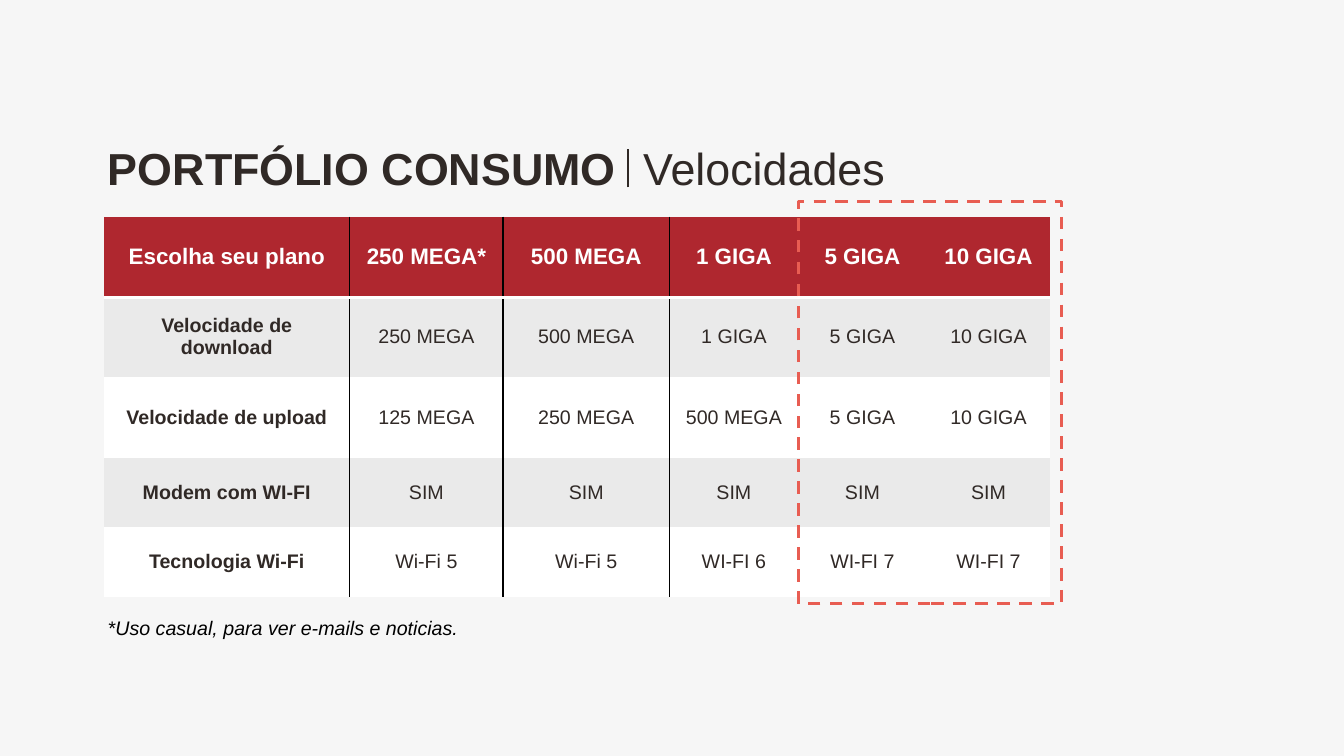
"""Build the slide of home internet plans and their speeds."""
from typing import NamedTuple

from lxml import etree
from pptx import Presentation
from pptx import util as u
from pptx.dml.color import RGBColor
from pptx.enum import dml, shapes, text
from pptx.oxml import ns

FONT = "Arial"
HUES = {"back": "F6F6F6", "ink": "302926", "red": "AF272F", "grey": "EAEAEA",
        "white": "FFFFFF", "black": "000000", "coral": "E85D52"}
WIDTHS = (2.44, 1.52, 1.65, 1.28, 1.27, 1.23)
HEIGHTS = (0.8, 0.79, 0.8, 0.69, 0.69)
PLANS = (
    ("Escolha seu plano", "250 MEGA*", "500 MEGA", "1 GIGA", "5 GIGA", "10 GIGA"),
    ("Velocidade de download", "250 MEGA", "500 MEGA", "1 GIGA", "5 GIGA", "10 GIGA"),
    ("Velocidade de upload", "125 MEGA", "250 MEGA", "500 MEGA", "5 GIGA", "10 GIGA"),
    ("Modem com WI-FI", "SIM", "SIM", "SIM", "SIM", "SIM"),
    ("Tecnologia Wi-Fi", "Wi-Fi 5", "Wi-Fi 5", "WI-FI 6", "WI-FI 7", "WI-FI 7"),
)
PLAIN = "{2D5ABB26-0587-4C30-8999-92F81FD0307C}"


class Box(NamedTuple):
    left: float
    top: float
    width: float
    height: float

    def sides(self) -> list:
        return [u.Inches(side) for side in self]


class Style(NamedTuple):
    size: int
    hue: str = "ink"
    bold: bool = False
    slant: bool = False


class Label(NamedTuple):
    words: str
    box: Box
    style: Style
    anchor: text.MSO_ANCHOR = text.MSO_ANCHOR.TOP


TITLE = Label("PORTFÓLIO CONSUMO", Box(0.97, 1.35, 5.59, 0.64), Style(32, bold=True))
NOTES = (
    Label("Velocidades", Box(6.28, 1.35, 3.52, 0.64), Style(32)),
    Label("*Uso casual, para ver e-mails e noticias.", Box(0.97, 5.99, 4.44, 0.47),
          Style(14, "black", slant=True), text.MSO_ANCHOR.MIDDLE),
)


def color(hue: str) -> RGBColor:
    return RGBColor.from_string(HUES[hue])


def write(frame, words: str, style: Style, align=text.PP_ALIGN.LEFT) -> None:
    frame.text = words
    frame.paragraphs[0].alignment = align
    font = frame.paragraphs[0].runs[0].font
    font.name, font.size = FONT, u.Pt(style.size)
    font.bold, font.italic = style.bold, style.slant
    font.color.rgb = color(style.hue)


def place(shape, label: Label) -> None:
    shape.left, shape.top, shape.width, shape.height = label.box.sides()
    frame = shape.text_frame
    frame.word_wrap = True
    frame.auto_size = text.MSO_AUTO_SIZE.NONE
    frame.vertical_anchor = label.anchor
    write(frame, label.words, label.style)


def edge(cell, side: str, hue: str, points: int) -> None:
    props = cell._tc.get_or_add_tcPr()
    line = etree.SubElement(props, ns.qn(f"a:ln{side}"), w=str(u.Pt(points)))
    fill = etree.SubElement(line, ns.qn("a:solidFill"))
    etree.SubElement(fill, ns.qn("a:srgbClr"), val=HUES[hue])


def fill_cell(cell, row: int, col: int) -> None:
    if col in (1, 2):
        edge(cell, "L", "black", 1)
    if col in (0, 1):
        edge(cell, "R", "black", 1)
    if row == 0:
        edge(cell, "B", "white", 2)
    cell.fill.solid()
    cell.fill.fore_color.rgb = color("red" if row == 0 else ("white", "grey")[row % 2])
    cell.vertical_anchor = text.MSO_ANCHOR.MIDDLE
    cell.margin_left = cell.margin_right = u.Inches(0.09)
    style = Style(16, "white", True) if row == 0 else Style(14, bold=col == 0)
    write(cell.text_frame, PLANS[row][col], style, text.PP_ALIGN.CENTER)


def add_plans(slide) -> None:
    box = Box(1.03, 2.15, sum(WIDTHS), sum(HEIGHTS))
    table = slide.shapes.add_table(len(HEIGHTS), len(WIDTHS), *box.sides()).table
    table._tbl.tblPr.find(ns.qn("a:tableStyleId")).text = PLAIN
    for col, width in enumerate(WIDTHS):
        table.columns[col].width = u.Inches(width)
    for row, height in enumerate(HEIGHTS):
        table.rows[row].height = u.Inches(height)
        for col in range(len(WIDTHS)):
            fill_cell(table.cell(row, col), row, col)


def add_rule(slide) -> None:
    ends = [u.Inches(side) for side in (6.23, 1.86, 6.23, 1.48)]
    rule = slide.shapes.add_connector(shapes.MSO_CONNECTOR.STRAIGHT, *ends)
    rule.line.color.rgb = color("ink")
    rule.line.width = u.Pt(1.5)
    etree.SubElement(rule._element.spPr, ns.qn("a:effectLst"))


def add_frame(slide) -> None:
    box = Box(7.92, 2, 2.61, 3.99)
    frame = slide.shapes.add_shape(shapes.MSO_SHAPE.RECTANGLE, *box.sides())
    frame.shadow.inherit = False
    frame.fill.background()
    frame.line.color.rgb = color("coral")
    frame.line.width = u.Pt(2.25)
    frame.line.dash_style = dml.MSO_LINE.DASH


def main() -> None:
    deck = Presentation()
    deck.slide_width, deck.slide_height = u.Inches(13.33), u.Inches(7.5)
    slide = deck.slides.add_slide(deck.slide_layouts[5])
    slide.background.fill.solid()
    slide.background.fill.fore_color.rgb = color("back")
    place(slide.shapes.title, TITLE)
    add_plans(slide)
    add_rule(slide)
    add_frame(slide)
    for note in NOTES:
        place(slide.shapes.add_textbox(*note.box.sides()), note)
    deck.save("out.pptx")


if __name__ == "__main__":
    main()
